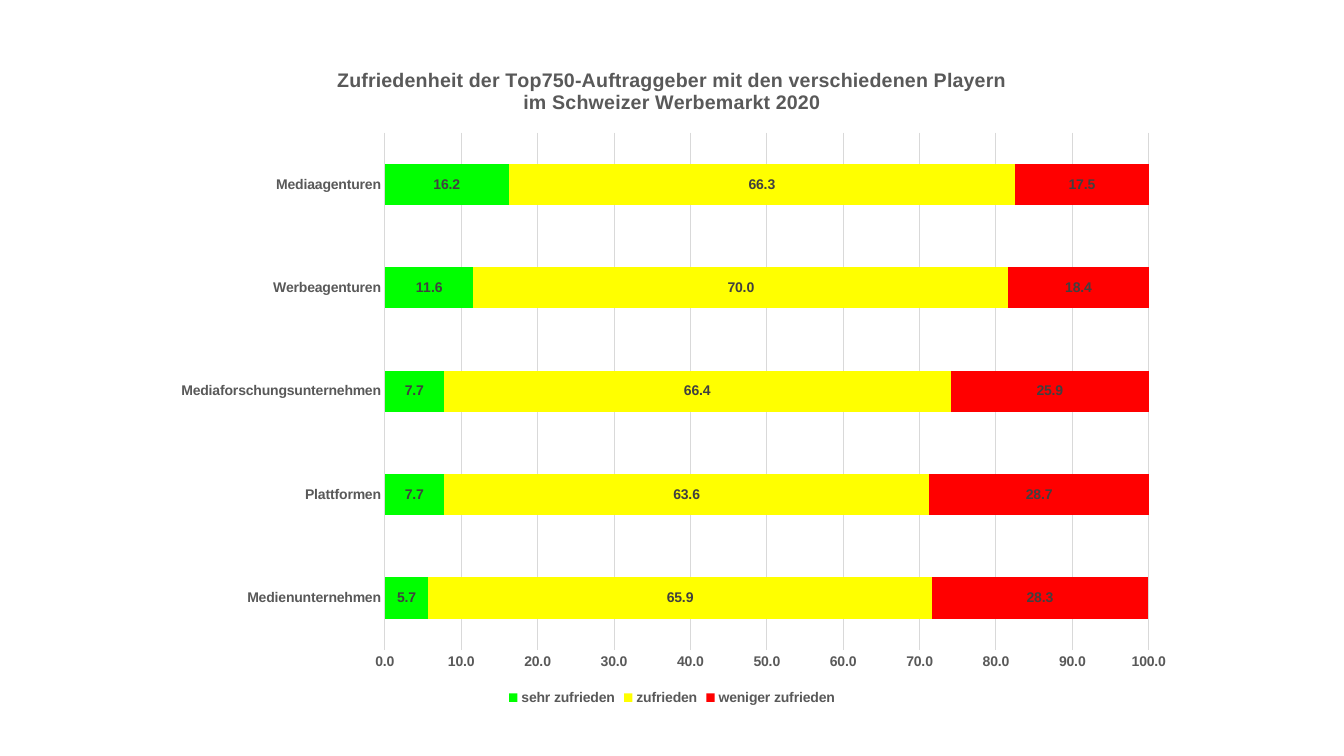
"""Build a slide with a stacked bar chart of client satisfaction in the Swiss advertising market."""
from lxml.etree import SubElement
from pptx import Presentation
from pptx.chart.data import CategoryChartData
from pptx.dml.color import RGBColor
from pptx.enum.chart import XL_CHART_TYPE, XL_LABEL_POSITION, XL_LEGEND_POSITION, XL_TICK_MARK
from pptx.oxml.ns import qn
from pptx.util import Inches, Pt

TITLE = [
    "Zufriedenheit der Top750-Auftraggeber mit den verschiedenen Playern",
    "im Schweizer Werbemarkt 2020",
]
PLAYERS = ["Medienunternehmen", "Plattformen", "Mediaforschungsunternehmen",
           "Werbeagenturen", "Mediaagenturen"]
RATINGS = {
    "sehr zufrieden": [5.7, 7.7, 7.7, 11.6, 16.2],
    "zufrieden": [65.9, 63.6, 66.4, 70.0, 66.3],
    "weniger zufrieden": [28.3, 28.7, 25.9, 18.4, 17.5],
}
COLORS = {
    "sehr zufrieden": "00FF00",
    "zufrieden": "FFFF00",
    "weniger zufrieden": "FF0000",
    "text": "595959",
    "label": "404040",
    "grid": "D9D9D9",
}
PLOT_AREA = {"x": 0.22, "y": 0.13, "w": 0.745, "h": 0.78}
NUMBER_FORMAT = "0.0"


def style_font(font, color, size=10):
    font.name = "Arial"
    font.size = Pt(size)
    font.bold = True
    font.color.rgb = RGBColor.from_string(COLORS[color])


def style_line(line):
    line.color.rgb = RGBColor.from_string(COLORS["grid"])
    line.width = Pt(0.75)


def add_title(chart):
    frame = chart.chart_title.text_frame
    for index, text in enumerate(TITLE):
        para = frame.add_paragraph() if index else frame.paragraphs[0]
        span = para.add_run()
        span.text = text
        style_font(span.font, "text", 14)
    chart.chart_title.include_in_layout = False


def style_axes(chart):
    for axis in (chart.category_axis, chart.value_axis):
        axis.major_tick_mark = XL_TICK_MARK.NONE
        axis.minor_tick_mark = XL_TICK_MARK.NONE
        style_font(axis.tick_labels.font, "text")
    chart.category_axis.has_major_gridlines = False
    style_line(chart.category_axis.format.line)
    values = chart.value_axis
    values.minimum_scale, values.maximum_scale, values.major_unit = 0, 100, 10
    values.tick_labels.number_format = NUMBER_FORMAT
    values.tick_labels.number_format_is_linked = False
    values.format.line.fill.background()
    values.has_major_gridlines = True
    style_line(values.major_gridlines.format.line)


def style_bars(plot):
    plot.gap_width = 150
    plot.overlap = 100
    plot.vary_by_categories = False
    for series in plot.series:
        series.format.fill.solid()
        series.format.fill.fore_color.rgb = RGBColor.from_string(COLORS[series.name])
        labels = series.data_labels
        labels.show_value = True
        labels.number_format = NUMBER_FORMAT
        labels.number_format_is_linked = False
        labels.position = XL_LABEL_POSITION.CENTER
        style_font(labels.font, "label")


def place_plot(chart):
    area = chart.element.find(".//" + qn("c:plotArea"))
    layout = area.find(qn("c:layout"))
    if layout is None:
        layout = SubElement(area, qn("c:layout"))
        area.insert(0, layout)
    manual = SubElement(layout, qn("c:manualLayout"))
    settings = {"layoutTarget": "inner", "xMode": "edge", "yMode": "edge", **PLOT_AREA}
    for name, value in settings.items():
        SubElement(manual, qn("c:" + name)).set("val", str(value))


def main():
    deck = Presentation()
    deck.slide_width, deck.slide_height = Inches(13.33), Inches(7.5)
    page = deck.slides.add_slide(deck.slide_layouts[6])
    data = CategoryChartData(number_format=NUMBER_FORMAT)
    data.categories = PLAYERS
    for rating, shares in RATINGS.items():
        data.add_series(rating, shares)
    chart = page.shapes.add_chart(
        XL_CHART_TYPE.BAR_STACKED, Inches(1.58), Inches(0.46),
        Inches(10.17), Inches(6.58), data).chart
    add_title(chart)
    style_axes(chart)
    style_bars(chart.plots[0])
    chart.has_legend = True
    chart.legend.position = XL_LEGEND_POSITION.BOTTOM
    chart.legend.include_in_layout = False
    style_font(chart.legend.font, "text")
    place_plot(chart)
    deck.save("out.pptx")


if __name__ == "__main__":
    main()
